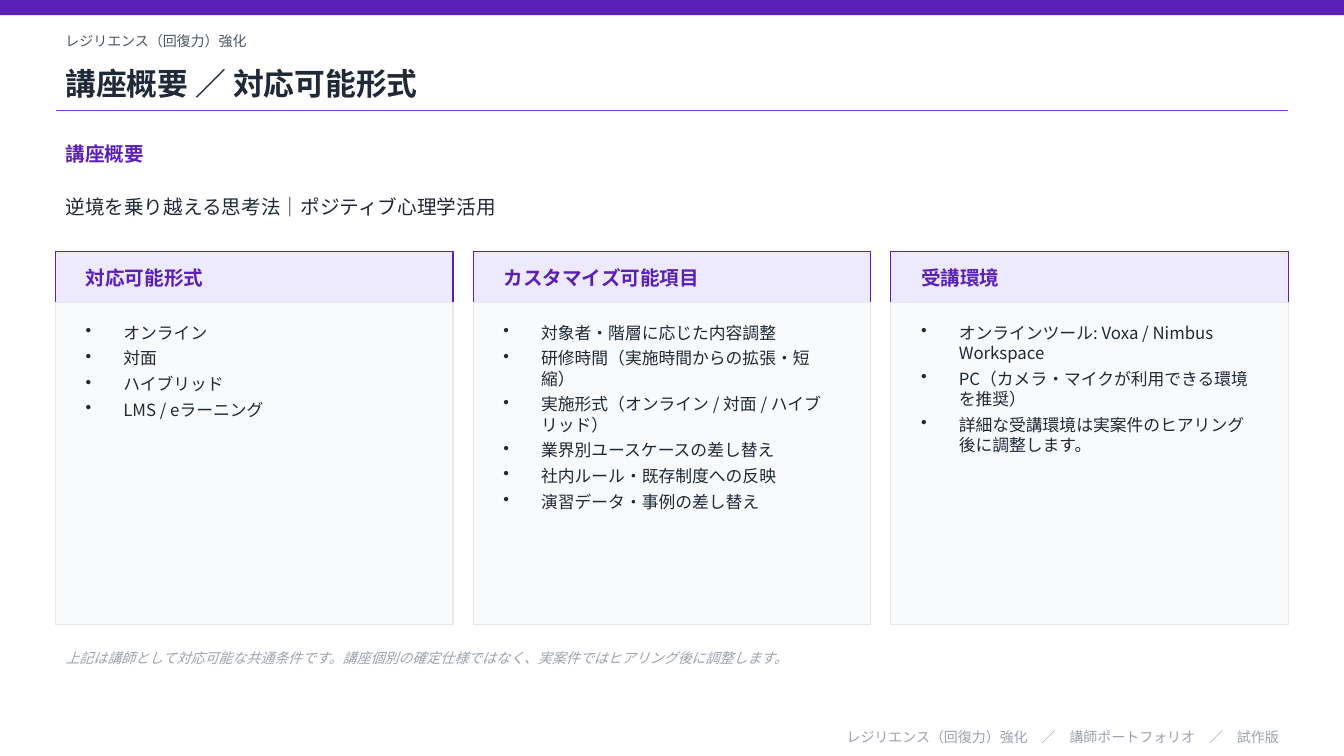
from lxml.etree import SubElement
from pptx import Presentation
from pptx.dml.color import RGBColor
from pptx.enum.shapes import MSO_CONNECTOR, MSO_SHAPE
from pptx.enum.text import MSO_ANCHOR, PP_ALIGN
from pptx.oxml.ns import qn
from pptx.util import Cm, Pt

# Content
COURSE = "レジリエンス（回復力）強化"
TITLE = "講座概要 ／ 対応可能形式"
OVERVIEW_HEADING = "講座概要"
OVERVIEW = "逆境を乗り越える思考法｜ポジティブ心理学活用"
CARDS = [
    ("対応可能形式", ["オンライン", "対面", "ハイブリッド", "LMS / eラーニング"]),
    ("カスタマイズ可能項目", [
        "対象者・階層に応じた内容調整",
        "研修時間（実施時間からの拡張・短縮）",
        "実施形式（オンライン / 対面 / ハイブリッド）",
        "業界別ユースケースの差し替え",
        "社内ルール・既存制度への反映",
        "演習データ・事例の差し替え",
    ]),
    ("受講環境", [
        "オンラインツール: Voxa / Nimbus Workspace",
        "PC（カメラ・マイクが利用できる環境を推奨）",
        "詳細な受講環境は実案件のヒアリング後に調整します。",
    ]),
]
NOTE = "上記は講師として対応可能な共通条件です。講座個別の確定仕様ではなく、実案件ではヒアリング後に調整します。"
FOOTER = f"{COURSE}　／　講師ポートフォリオ　／　試作版"

THEME = {
    "font": "Noto Sans CJK JP",
    "purple": "5B21B6", "violet": "7C3AED", "lilac": "EDE9FE",
    "ink": "1F2937", "slate": "4B5563", "muted": "9CA3AF",
    "panel": "F9FAFB", "border": "E5E7EB",
    "title": 22, "heading": 14, "body": 12, "small": 10,
}

# Layout in centimetres
SLIDE_WIDTH, SLIDE_HEIGHT = 33.87, 19.05
MARGIN, GAP, PADDING = 1.4, 0.51, 0.51
CONTENT_WIDTH = SLIDE_WIDTH - 2 * MARGIN
CARD_WIDTH = (CONTENT_WIDTH - GAP * (len(CARDS) - 1)) / len(CARDS)
CARD_TOP, HEADER_HEIGHT, PANEL_HEIGHT = 6.35, 1.27, 8.13
PANEL_TOP = CARD_TOP + HEADER_HEIGHT
LIST_INSET, LIST_HEIGHT, BULLET_INDENT = 0.38, 7.24, 0.95

deck = Presentation()
deck.slide_width, deck.slide_height = Cm(SLIDE_WIDTH), Cm(SLIDE_HEIGHT)
slide = deck.slides.add_slide(deck.slide_layouts[6])


def color(name):
    return RGBColor.from_string(THEME[name])


def add_bullet(para):
    properties = para._p.get_or_add_pPr()
    properties.set("marL", str(Cm(BULLET_INDENT)))
    properties.set("indent", str(-Cm(BULLET_INDENT)))
    SubElement(properties, qn("a:buChar")).set("char", "•")
    para.space_after = Pt(4)


def add_text(lines, left, top, width, height, size="body", ink="ink", bold=False,
             italic=False, bullets=False, align=PP_ALIGN.LEFT, anchor=MSO_ANCHOR.MIDDLE):
    box = slide.shapes.add_textbox(Cm(left), Cm(top), Cm(width), Cm(height))
    frame = box.text_frame
    frame.word_wrap = True
    frame.vertical_anchor = anchor
    for index, line in enumerate(lines):
        para = frame.add_paragraph() if index else frame.paragraphs[0]
        para.alignment = align
        if bullets:
            add_bullet(para)
        span = para.add_run()
        span.text = line
        font = span.font
        font.size, font.bold, font.italic = Pt(THEME[size]), bold, italic
        font.color.rgb = color(ink)
        font.name = THEME["font"]
        SubElement(span._r.get_or_add_rPr(), qn("a:ea")).set("typeface", THEME["font"])


def add_block(left, top, width, height, fill, line=None):
    block = slide.shapes.add_shape(MSO_SHAPE.RECTANGLE, Cm(left), Cm(top), Cm(width), Cm(height))
    block.shadow.inherit = False
    block.fill.solid()
    block.fill.fore_color.rgb = color(fill)
    if line:
        block.line.color.rgb = color(line)
        block.line.width = Pt(0.75)
    else:
        block.line.fill.background()


# Top band, title and rule
add_block(0, 0, SLIDE_WIDTH, 0.38, "purple")
add_text([COURSE], MARGIN, 0.64, CONTENT_WIDTH, 0.76, size="small", ink="slate")
add_text([TITLE], MARGIN, 1.4, CONTENT_WIDTH, 1.4, size="title", bold=True)
rule = slide.shapes.add_connector(
    MSO_CONNECTOR.STRAIGHT, Cm(MARGIN), Cm(2.79), Cm(MARGIN + CONTENT_WIDTH), Cm(2.79))
rule.line.color.rgb = color("violet")
rule.line.width = Pt(1)
SubElement(rule._element.spPr, qn("a:effectLst"))

# Overview
add_text([OVERVIEW_HEADING], MARGIN, 3.43, CONTENT_WIDTH, 0.89,
         size="heading", ink="purple", bold=True)
add_text([OVERVIEW], MARGIN, 4.45, CONTENT_WIDTH, 1.52, size="heading")

# Cards
for column, (heading, items) in enumerate(CARDS):
    left = MARGIN + column * (CARD_WIDTH + GAP)
    text_left, text_width = left + PADDING, CARD_WIDTH - 2 * PADDING
    add_block(left, CARD_TOP, CARD_WIDTH, HEADER_HEIGHT, "lilac", line="purple")
    add_text([heading], text_left, CARD_TOP, text_width, HEADER_HEIGHT,
             size="heading", ink="purple", bold=True)
    add_block(left, PANEL_TOP, CARD_WIDTH, PANEL_HEIGHT, "panel", line="border")
    add_text(items, text_left, PANEL_TOP + LIST_INSET, text_width, LIST_HEIGHT,
             bullets=True, anchor=MSO_ANCHOR.TOP)

# Note and footer
add_text([NOTE], MARGIN, 16.13, CONTENT_WIDTH, 0.89, size="small", ink="muted", italic=True)
add_text([FOOTER], MARGIN, 18.29, CONTENT_WIDTH, 0.56,
         size="small", ink="muted", align=PP_ALIGN.RIGHT)

deck.save("out.pptx")
